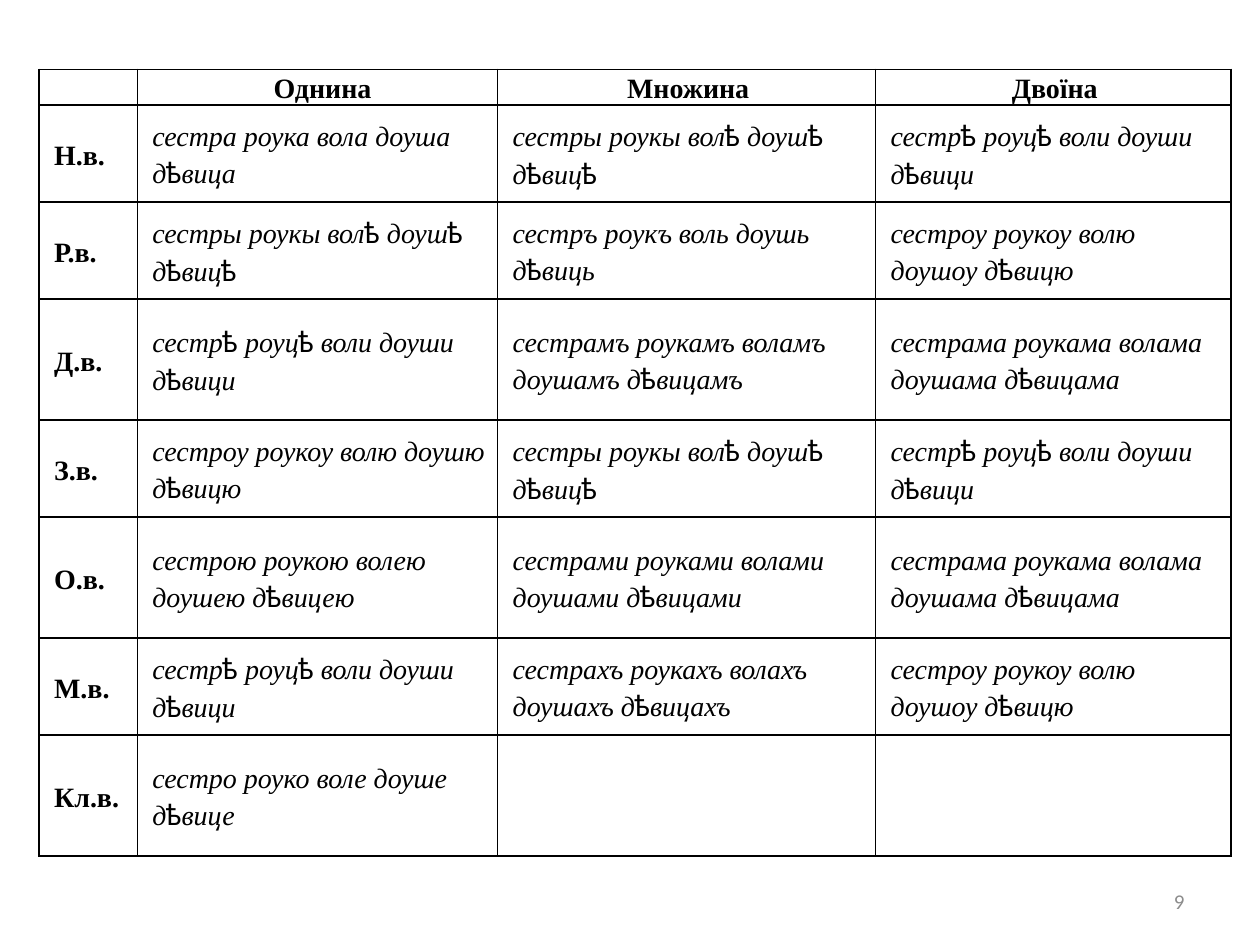
from itertools import groupby

from lxml import etree
from pptx import Presentation
from pptx import util as u
from pptx.dml.color import RGBColor
from pptx.enum import text
from pptx.oxml.ns import qn

COLORS = {"ink": "000000", "page_number": "8C8C8C"}
SERIF, YAT_FONT = "Times New Roman", "Roboto"
YAT = "ѣ"

HEADER = ["", "Однина", "Множина ", "Двоїна "]
CASES = [
    ["Н.в.", "сестра роука вола доуша дѣвица",
     "сестры роукы волѣ доушѣ дѣвицѣ", "сестрѣ роуцѣ воли доуши дѣвици"],
    ["Р.в.", "сестры роукы волѣ доушѣ дѣвицѣ",
     "сестръ роукъ воль доушь дѣвиць", "сестроу роукоу волю доушоу дѣвицю"],
    ["Д.в.", "сестрѣ роуцѣ воли доуши дѣвици",
     "сестрамъ роукамъ воламъ доушамъ дѣвицамъ", "сестрама роукама волама доушама дѣвицама"],
    ["З.в.", "сестроу роукоу волю доушю дѣвицю",
     "сестры роукы волѣ доушѣ дѣвицѣ", "сестрѣ роуцѣ воли доуши дѣвици"],
    ["О.в.", "сестрою роукою волею доушею дѣвицею",
     "сестрами роуками волами доушами дѣвицами", "сестрама роукама волама доушама дѣвицама"],
    ["М.в.", "сестрѣ роуцѣ воли доуши дѣвици",
     "сестрахъ роукахъ волахъ доушахъ дѣвицахъ", "сестроу роукоу волю доушоу дѣвицю"],
    ["Кл.в.", "сестро роуко воле доуше дѣвице", "", ""],
]
ROWS = [HEADER] + CASES
COLUMN_WIDTHS = [0.78, 2.86, 3, 2.82]
ROW_HEIGHTS = [0.28, 0.77, 0.77, 0.96, 0.77, 0.96, 0.77, 0.96]


def add_borders(cell):
    props = cell._tc.get_or_add_tcPr()
    for position, side in enumerate(("a:lnL", "a:lnR", "a:lnT", "a:lnB")):
        line = etree.Element(qn(side), w=str(u.Pt(1)))
        fill = etree.SubElement(line, qn("a:solidFill"))
        etree.SubElement(fill, qn("a:srgbClr"), val=COLORS["ink"])
        props.insert(position, line)


def add_words(para, words):
    """Set words in italic serif, but each yat upright in its own font."""
    for is_yat, letters in groupby(words, lambda letter: letter == YAT):
        span = para.add_run()
        span.text = "".join(letters)
        span.font.name = YAT_FONT if is_yat else SERIF
        span.font.italic = not is_yat


deck = Presentation()
deck.slide_width, deck.slide_height = u.Inches(10), u.Inches(7.5)
page = deck.slides.add_slide(deck.slide_layouts[6])

frame = page.shapes.add_table(
    len(ROWS), len(HEADER), u.Inches(0.31), u.Inches(0.55),
    u.Inches(sum(COLUMN_WIDTHS)), u.Inches(sum(ROW_HEIGHTS)))
table = frame.table
table.first_row = table.horz_banding = False
for column, width in zip(table.columns, COLUMN_WIDTHS):
    column.width = u.Inches(width)
for row, height in zip(table.rows, ROW_HEIGHTS):
    row.height = u.Inches(height)

for row_index, row in enumerate(ROWS):
    for column_index, words in enumerate(row):
        cell = table.cell(row_index, column_index)
        cell.fill.background()
        add_borders(cell)
        cell.margin_left = cell.margin_right = u.Inches(0.04)
        cell.margin_top = cell.margin_bottom = 0
        para = cell.text_frame.paragraphs[0]
        para.line_spacing = 1.15
        para._p.get_or_add_pPr().set("marL", str(u.Inches(0.08)))
        para.font.size = u.Pt(16)
        para.font.name = SERIF
        para.font.color.rgb = RGBColor.from_string(COLORS["ink"])
        if row_index == 0:
            para.alignment = text.PP_ALIGN.CENTER
        else:
            cell.vertical_anchor = text.MSO_ANCHOR.MIDDLE
        if row_index == 0 or column_index == 0:
            para.font.bold = True
            para.text = words
        else:
            add_words(para, words)

box = page.shapes.add_textbox(u.Inches(7.17), u.Inches(6.95), u.Inches(2.33), u.Inches(0.4))
box.text_frame.word_wrap = True
box.text_frame.vertical_anchor = text.MSO_ANCHOR.MIDDLE
para = box.text_frame.paragraphs[0]
para.text = "9"
para.alignment = text.PP_ALIGN.RIGHT
para.font.name = "Calibri"
para.font.size = u.Pt(12)
para.font.color.rgb = RGBColor.from_string(COLORS["page_number"])

deck.save("out.pptx")
